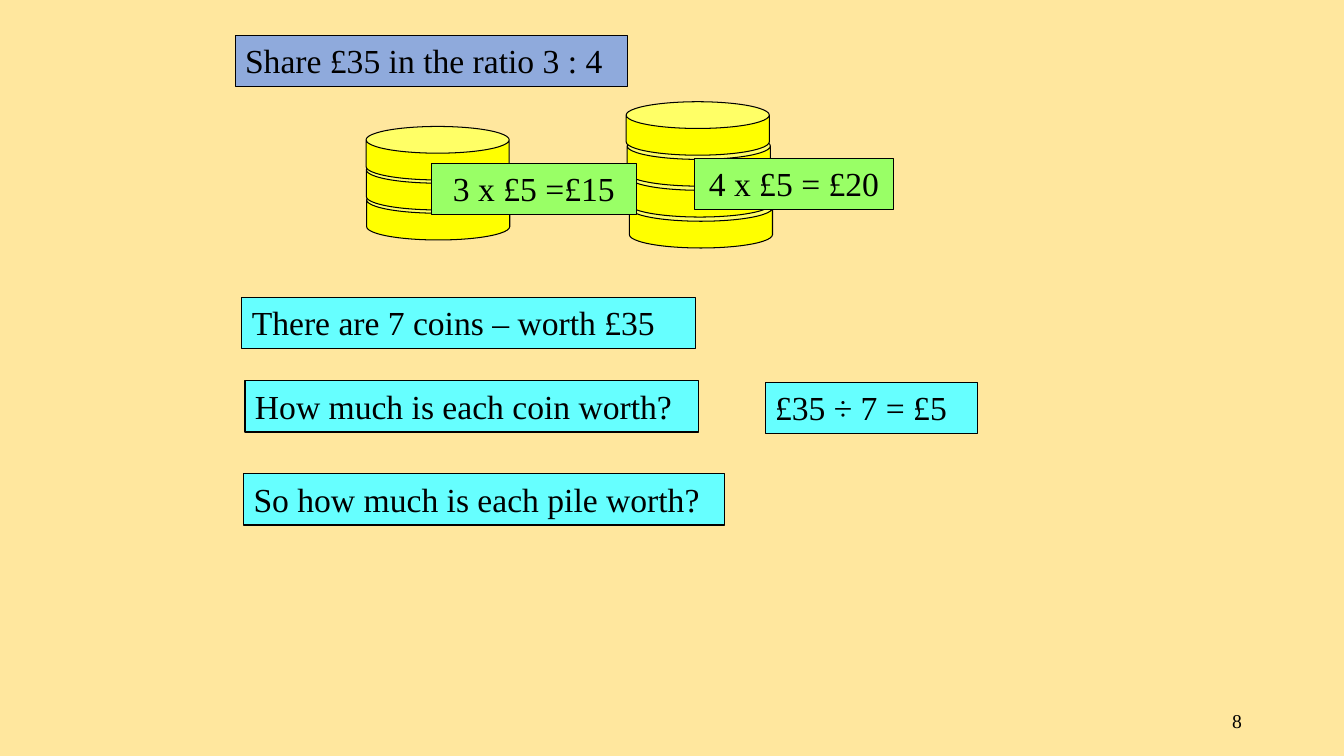
from pptx import Presentation
from pptx import util as u
from pptx.dml.color import RGBColor
from pptx.enum import shapes, text

SAND = RGBColor(0xFF, 0xE7, 0x9E)
BLUE = RGBColor(0x8F, 0xAA, 0xDC)
CYAN = RGBColor(0x66, 0xFF, 0xFF)
GREEN = RGBColor(0x99, 0xFF, 0x66)
YELLOW = RGBColor(0xFF, 0xFF, 0x00)
BLACK = RGBColor(0, 0, 0)
LEFT, CENTER, RIGHT = text.PP_ALIGN.LEFT, text.PP_ALIGN.CENTER, text.PP_ALIGN.RIGHT


class Deck:
    """Slide style and builders; lengths are percentages of the slide's size."""

    font = "Times New Roman"
    box_height = 6.8
    coin_width, coin_height = 10.65, 7.07

    def __init__(self):
        self.prs = Presentation()
        self.prs.slide_width, self.prs.slide_height = u.Inches(13.33), u.Inches(7.5)
        self.s = self.prs.slides.add_slide(self.prs.slide_layouts[6])
        fill = self.s.background.fill
        fill.solid()
        fill.fore_color.rgb = SAND

    def area(self, x, y, w, h):
        sw, sh = self.prs.slide_width, self.prs.slide_height
        return [round(v * size / 100) for v, size in ((x, sw), (y, sh), (w, sw), (h, sh))]

    def shape(self, kind, x, y, w, h, color):
        sp = self.s.shapes.add_shape(kind, *self.area(x, y, w, h))
        sp.shadow.inherit = False
        sp.fill.solid()
        sp.fill.fore_color.rgb = color
        sp.line.color.rgb = BLACK
        sp.line.width = u.Pt(0.75)
        return sp

    def label(self, sp, words, size, align, anchor):
        tf = sp.text_frame
        tf.word_wrap = True
        tf.vertical_anchor = anchor
        p = tf.paragraphs[0]
        p.text = words
        p.alignment = align
        p.font.name, p.font.size = self.font, u.Pt(size)
        p.font.color.rgb = BLACK

    def box(self, words, x, y, w, color, align=LEFT):
        sp = self.shape(shapes.MSO_SHAPE.RECTANGLE, x, y, w, self.box_height, color)
        self.label(sp, words, 24, align, text.MSO_ANCHOR.TOP)

    def pile(self, coins, x, y, dx, dy):
        for i in range(coins):
            sp = self.shape(shapes.MSO_SHAPE.CAN, x - i * dx, y - i * dy,
                            self.coin_width, self.coin_height, YELLOW)
            sp.adjustments[0] = 0.5

    def number(self, words, x, y, w, h):
        sp = self.s.shapes.add_textbox(*self.area(x, y, w, h))
        self.label(sp, words, 14, RIGHT, text.MSO_ANCHOR.MIDDLE)


def main():
    deck = Deck()
    deck.number("8", 70.65, 92.67, 22.5, 5.33)
    deck.box("Share £35 in the ratio 3 : 4", 17.5, 4.67, 29.18, BLUE)
    deck.pile(3, 27.28, 24.67, 0.02, 3.97)
    deck.pile(4, 46.83, 25.73, 0.08, 4.09)
    deck.box("There are 7 coins – worth £35", 18, 39.33, 33.75, CYAN)
    deck.box("How much is each coin worth?", 18.23, 50.35, 33.75, CYAN)
    deck.box("£35 ÷ 7 = £5", 56.93, 50.55, 15.83, CYAN)
    deck.box("3 x £5 =£15", 32.1, 21.6, 15.23, GREEN, CENTER)
    deck.box("4 x £5 = £20", 51.68, 20.93, 14.78, GREEN, CENTER)
    deck.box("So how much is each pile worth?", 18.13, 62.65, 35.78, CYAN)
    deck.prs.save("out.pptx")


if __name__ == "__main__":
    main()
